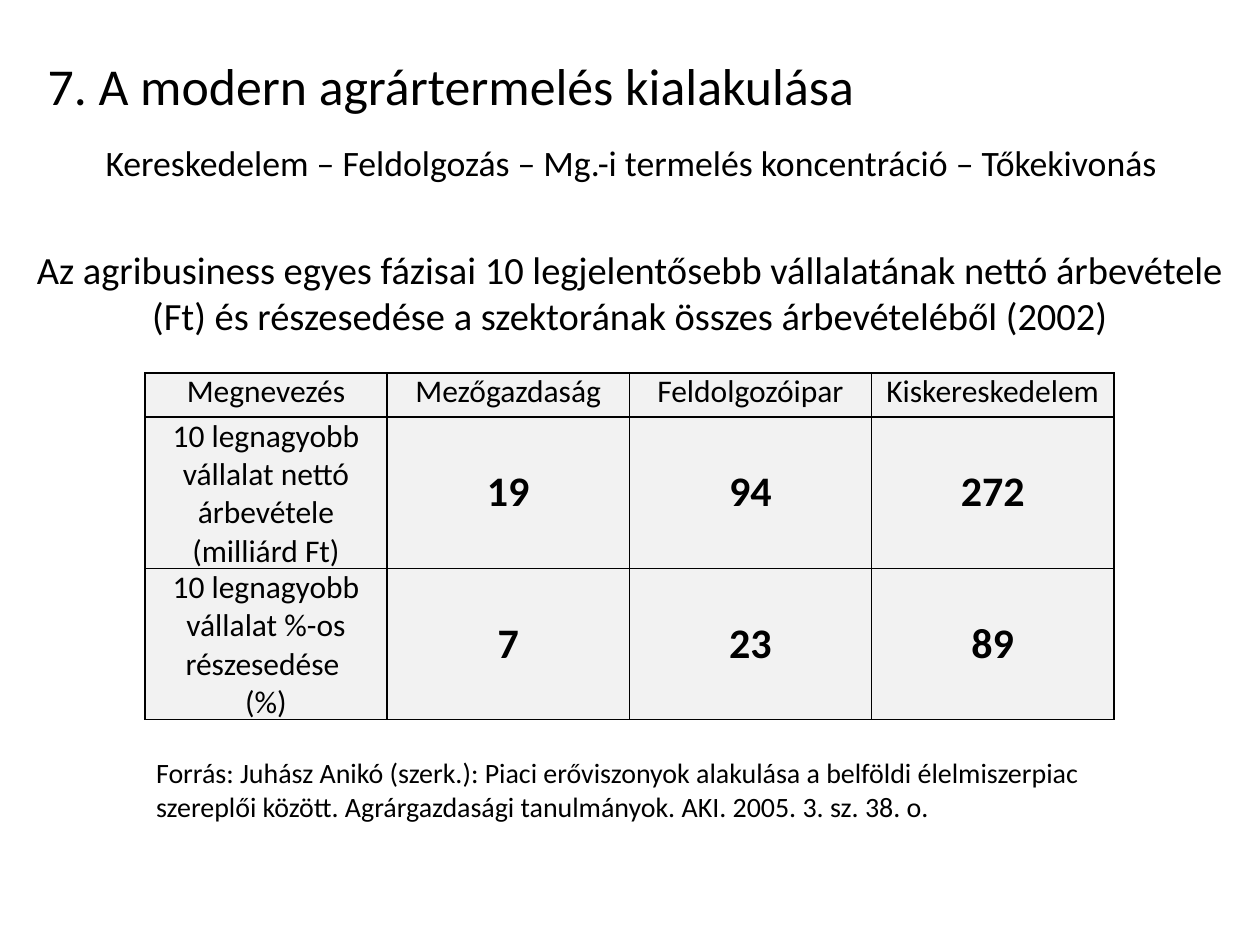
import pptx
import pptx.dml.color
import pptx.enum.text
import pptx.oxml
import pptx.oxml.ns
import pptx.util

Inches, Pt = pptx.util.Inches, pptx.util.Pt
ALIGN = pptx.enum.text.PP_ALIGN
ANCHOR = pptx.enum.text.MSO_ANCHOR
BLACK = pptx.dml.color.RGBColor(0x00, 0x00, 0x00)
CELL_GREY = pptx.dml.color.RGBColor(0xF2, 0xF2, 0xF2)

deck = pptx.Presentation()
deck.slide_width, deck.slide_height = Inches(10), Inches(7.5)
slide = deck.slides.add_slide(deck.slide_layouts[6])


def style(paragraph, size, align=ALIGN.LEFT, bold=False):
    paragraph.alignment = align
    paragraph.font.name = "Calibri"
    paragraph.font.size = Pt(size)
    paragraph.font.bold = bold
    paragraph.font.color.rgb = BLACK


def add_text(left, top, width, height, text, size, align=ALIGN.LEFT):
    """Add a wrapped text box, measured in inches, and return its frame."""
    box = slide.shapes.add_textbox(*map(Inches, (left, top, width, height)))
    box.text_frame.word_wrap = True
    box.text_frame.text = text
    style(box.text_frame.paragraphs[0], size, align)
    return box.text_frame


# Heading with the indented chain of phases below it
heading = add_text(0.28, 0.38, 9.3, 1.42, "7. A modern agrártermelés kialakulása", 29.6)
phases = heading.add_paragraph()
phases.text = "Kereskedelem – Feldolgozás – Mg.-i termelés koncentráció – Tőkekivonás"
style(phases, 20.4)
phases.space_before = Pt(13.8)
phases._p.get_or_add_pPr().set("marL", str(Inches(0.46)))

add_text(0.12, 1.9, 9.76, 0.84,
         "Az agribusiness egyes fázisai 10 legjelentősebb vállalatának nettó árbevétele "
         "(Ft) és részesedése a szektorának összes árbevételéből (2002)", 22, ALIGN.CENTER)

# Revenue and share of the ten largest companies
figures = [
    ["Megnevezés", "Mezőgazdaság", "Feldolgozóipar", "Kiskereskedelem"],
    ["10 legnagyobb vállalat nettó árbevétele (milliárd Ft)", "19", "94", "272"],
    ["10 legnagyobb vállalat %-os részesedése \n(%)", "7", "23", "89"],
]
row_heights = [0.35, 1.2, 1.2]
table = slide.shapes.add_table(len(figures), len(figures[0]), Inches(1.15), Inches(2.96),
                               Inches(7.69), Inches(sum(row_heights))).table
for row, height in zip(table.rows, row_heights):
    row.height = Inches(height)

for r, line in enumerate(figures):
    for c, text in enumerate(line):
        is_value = r > 0 and c > 0
        cell = table.cell(r, c)
        cell.text = text
        cell.margin_left = cell.margin_right = Inches(0.07)
        cell.margin_top = cell.margin_bottom = 0
        cell.vertical_anchor = ANCHOR.MIDDLE if is_value else ANCHOR.TOP
        for paragraph in cell.text_frame.paragraphs:
            style(paragraph, 24 if is_value else 18, ALIGN.CENTER, is_value)
        properties = cell._tc.get_or_add_tcPr()
        for side in ("lnL", "lnR", "lnT", "lnB"):
            properties.append(pptx.oxml.parse_xml(
                f'<a:{side} {pptx.oxml.ns.nsdecls("a")} w="{Pt(1)}"><a:solidFill>'
                f'<a:srgbClr val="{BLACK}"/></a:solidFill></a:{side}>'))
        cell.fill.solid()
        cell.fill.fore_color.rgb = CELL_GREY

add_text(1.14, 5.95, 7.72, 0.64,
         "Forrás: Juhász Anikó (szerk.): Piaci erőviszonyok alakulása a belföldi élelmiszerpiac "
         "szereplői között. Agrárgazdasági tanulmányok. AKI. 2005. 3. sz. 38. o.", 16)

deck.save("out.pptx")
